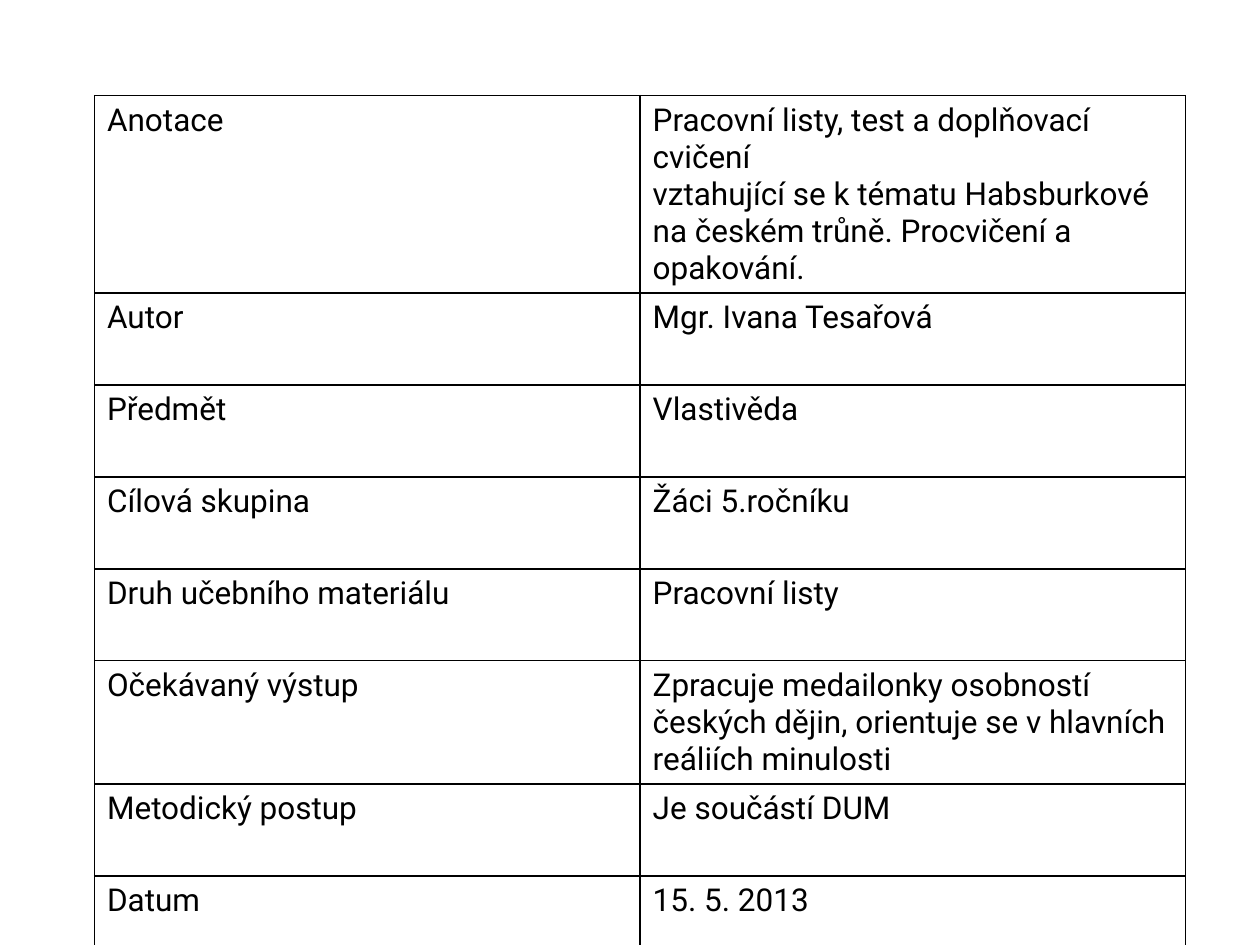
from lxml import etree
from pptx import Presentation
from pptx.dml.color import RGBColor
from pptx.util import Pt

BLACK = RGBColor(0, 0, 0)
WHITE = RGBColor(255, 255, 255)
NAMESPACE = "http://schemas.openxmlformats.org/drawingml/2006/main"
COLUMN_WIDTH = 311.8
ROW_HEIGHT = 52.5

LESSON_DETAILS = [
    ("Anotace", "Pracovní listy, test a doplňovací cvičení\n"
                "vztahující se k tématu Habsburkové na českém trůně. "
                "Procvičení a opakování."),
    ("Autor", "Mgr. Ivana Tesařová"),
    ("Předmět", "Vlastivěda"),
    ("Cílová skupina", "Žáci 5.ročníku"),
    ("Druh učebního materiálu", "Pracovní listy"),
    ("Očekávaný výstup", "Zpracuje medailonky osobností českých dějin, "
                         "orientuje se v hlavních reáliích minulosti"),
    ("Metodický postup", "Je součástí DUM"),
    ("Datum", "15. 5. 2013"),
]


def add_borders(cell, color, width):
    properties = cell._tc.get_or_add_tcPr()
    # Borders come before the fill in the cell properties
    for position, side in enumerate(("lnL", "lnR", "lnT", "lnB")):
        line = etree.Element(f"{{{NAMESPACE}}}{side}", w=str(width))
        fill = etree.SubElement(line, f"{{{NAMESPACE}}}solidFill")
        etree.SubElement(fill, f"{{{NAMESPACE}}}srgbClr", val=str(color))
        properties.insert(position, line)


presentation = Presentation()
presentation.slide_width = Pt(720)
presentation.slide_height = Pt(540)
slide = presentation.slides.add_slide(presentation.slide_layouts[6])

# Table grid
row_count = len(LESSON_DETAILS)
table = slide.shapes.add_table(
    row_count, 2, Pt(54), Pt(54.7),
    Pt(2 * COLUMN_WIDTH), Pt(row_count * ROW_HEIGHT)).table
table.first_row = False
table.horz_banding = False
for column in table.columns:
    column.width = Pt(COLUMN_WIDTH)
for row in table.rows:
    row.height = Pt(ROW_HEIGHT)

# Cell wording and format
for row, details in zip(table.rows, LESSON_DETAILS):
    for cell, wording in zip(row.cells, details):
        cell.text_frame.text = wording
        cell.fill.solid()
        cell.fill.fore_color.rgb = WHITE
        add_borders(cell, BLACK, Pt(1))
        for paragraph in cell.text_frame.paragraphs:
            for run in paragraph.runs:
                run.font.name = "Roboto"
                run.font.size = Pt(18)
                run.font.color.rgb = BLACK

presentation.save("out.pptx")
